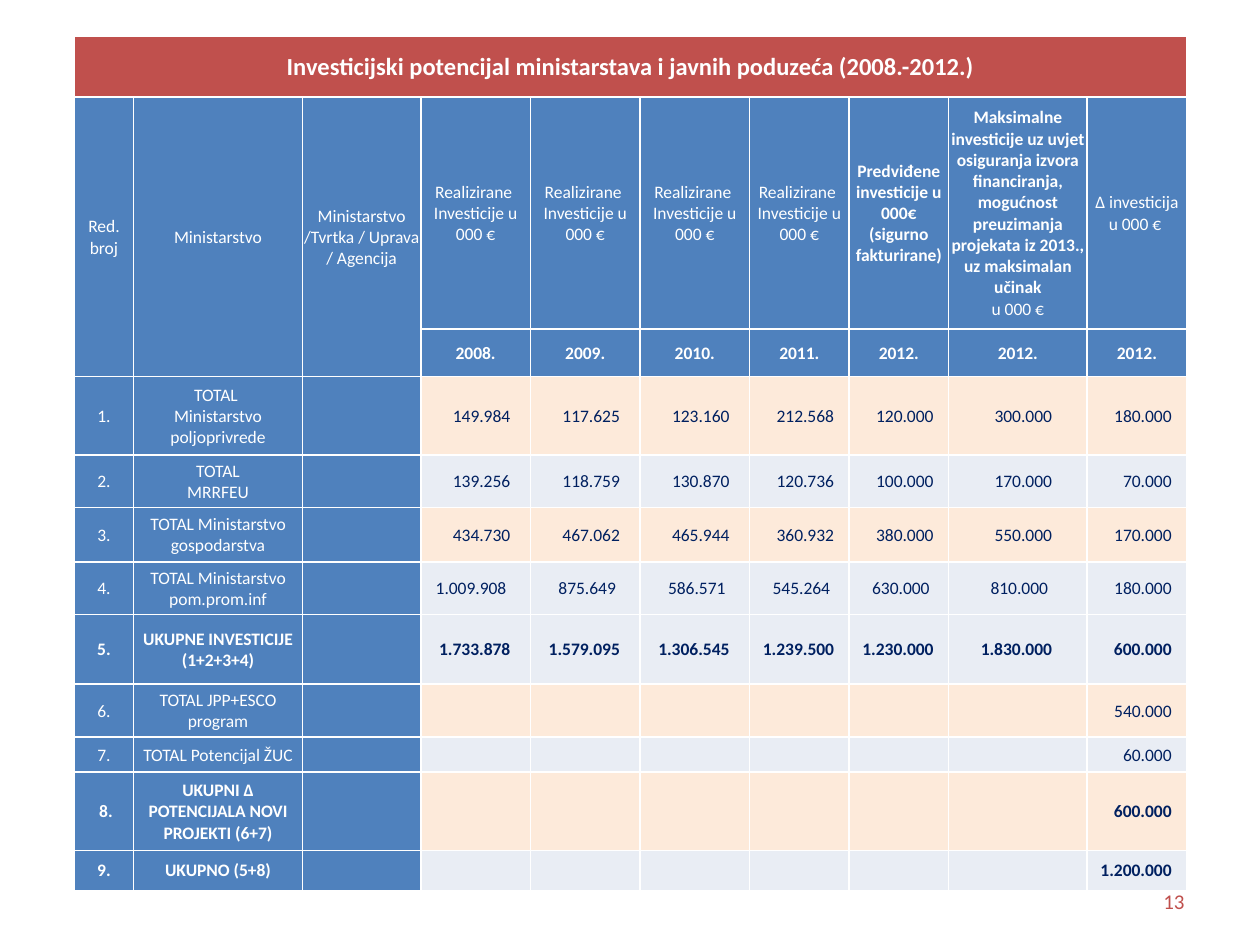
from lxml.etree import SubElement
from pptx import Presentation
from pptx.dml.color import RGBColor
from pptx.enum.text import MSO_ANCHOR as Anchor, PP_ALIGN as Align
from pptx.oxml import parse_xml
from pptx.oxml.ns import nsdecls, qn
from pptx.util import Inches, Pt

WHITE = RGBColor(0xFF, 0xFF, 0xFF)
RED = RGBColor(0xC0, 0x50, 0x4D)
BLUE = RGBColor(0x4F, 0x81, 0xBD)
NAVY = RGBColor(0x00, 0x20, 0x60)
PEACH = RGBColor(0xFD, 0xEA, 0xDA)
PALE = RGBColor(0xE9, 0xED, 0xF4)

FONT = "Calibri"
COL_WIDTHS = [0.47, 1.34, 0.94, 0.87, 0.87, 0.87, 0.79, 0.79, 1.1, 0.79]
ROW_HEIGHTS = [0.48, 1.84, 0.38, 0.62, 0.42, 0.43, 0.42, 0.55, 0.42, 0.28, 0.62, 0.32]
# Right insets of the value columns
VALUE_INSETS = [0.16, 0.16, 0.16, 0.12, 0.12, 0.28, 0.12]
FIRST_VALUE_COL = 3
FIRST_BODY_ROW = 3

TITLE = "Investicijski potencijal ministarstava i javnih poduzeća (2008.-2012.)"
REALIZED = "Realizirane  Investicije u 000 €"
PLANNED = "Predviđene investicije u 000€ (sigurno fakturirane)"
MAXIMUM = ("Maksimalne investicije uz uvjet osiguranja izvora financiranja, "
           "mogućnost preuzimanja projekata iz 2013., uz maksimalan učinak")
# Each heading is a list of (paragraph text, bold)
HEADINGS = [
    [("Red. broj", False)],
    [("Ministarstvo", False)],
    [("Ministarstvo /Tvrtka / Uprava / Agencija", False)],
    *[[(REALIZED, False)]] * 4,
    [(PLANNED, True)],
    [(MAXIMUM, True), ("u 000 €", False)],
    [("Δ investicija", False), ("u 000 € ", False)],
]
YEARS = ["2008.", "2009.", "2010.", "2011.", "2012.", "2012.", "2012."]
NO_VALUES = [""] * 6
# Number, name, values, fill of the values, bold
BODY = [
    ("1.", "TOTAL \nMinistarstvo poljoprivrede",
     ["149.984", "117.625", "123.160", "212.568", "120.000", "300.000", "180.000"], PEACH, False),
    ("2.", "TOTAL\nMRRFEU",
     ["139.256", "118.759", "130.870", "120.736", "100.000", "170.000", "70.000"], PALE, False),
    ("3.", "TOTAL Ministarstvo gospodarstva",
     ["434.730", "467.062", "465.944", "360.932", "380.000", "550.000", "170.000"], PEACH, False),
    ("4.", "TOTAL Ministarstvo pom.prom.inf",
     ["1.009.908 ", "875.649 ", "586.571 ", "545.264 ", "630.000 ", "810.000 ", "180.000"],
     PALE, False),
    ("5.", "UKUPNE INVESTICIJE (1+2+3+4)",
     ["1.733.878", "1.579.095", "1.306.545", "1.239.500", "1.230.000", "1.830.000", "600.000"],
     PALE, True),
    ("6.", "TOTAL JPP+ESCO program", NO_VALUES + ["540.000"], PEACH, False),
    ("7.", "TOTAL Potencijal ŽUC", NO_VALUES + ["60.000"], PALE, False),
    (" 8.", "UKUPNI Δ POTENCIJALA NOVI PROJEKTI (6+7)", NO_VALUES + ["600.000"], PEACH, True),
    ("9.", "UKUPNO (5+8)", NO_VALUES + ["1.200.000"], PALE, True),
]


def format_paragraph(p, text, size, color, bold=False, align=Align.CENTER):
    p.text = text
    p.alignment = align
    p.font.name = FONT
    p.font.size = Pt(size)
    p.font.bold = bold
    p.font.color.rgb = color


def add_borders(cell):
    tc_pr = cell._tc.get_or_add_tcPr()
    for side in ("lnL", "lnR", "lnT", "lnB"):
        ln = parse_xml(f'<a:{side} {nsdecls("a")} w="{Pt(1)}"/>')
        fill = SubElement(ln, qn("a:solidFill"))
        SubElement(fill, qn("a:srgbClr"), val=str(WHITE))
        tc_pr.append(ln)


def style_cell(cell, fill, right_inset=0.01):
    add_borders(cell)
    cell.fill.solid()
    cell.fill.fore_color.rgb = fill
    cell.vertical_anchor = Anchor.MIDDLE
    cell.margin_left = cell.margin_top = Inches(0.01)
    cell.margin_right = Inches(right_inset)
    cell.margin_bottom = 0


def fill_label(cell, paragraphs, size=10):
    tf = cell.text_frame
    for i, (text, bold) in enumerate(paragraphs):
        p = tf.add_paragraph() if i else tf.paragraphs[0]
        format_paragraph(p, text, size, WHITE, bold)


def add_investment_table(slide):
    frame = slide.shapes.add_table(len(ROW_HEIGHTS), len(COL_WIDTHS), Inches(0.59),
                                   Inches(0.29), Inches(8.82), Inches(6.77))
    table = frame.table
    table.first_row = table.horz_banding = False
    for column, width in zip(table.columns, COL_WIDTHS):
        column.width = Inches(width)
    for row, height in zip(table.rows, ROW_HEIGHTS):
        row.height = Inches(height)

    # Title and heading rows
    for r in range(FIRST_BODY_ROW):
        for c in range(len(COL_WIDTHS)):
            style_cell(table.cell(r, c), BLUE if r else RED)
    table.cell(0, 0).merge(table.cell(0, len(COL_WIDTHS) - 1))
    for c in range(FIRST_VALUE_COL):
        table.cell(1, c).merge(table.cell(2, c))
    fill_label(table.cell(0, 0), [(TITLE, True)], 14)
    for c, heading in enumerate(HEADINGS):
        fill_label(table.cell(1, c), heading)
    for c, year in enumerate(YEARS, FIRST_VALUE_COL):
        fill_label(table.cell(2, c), [(year, True)])

    # Body rows
    for r, (number, name, values, fill, bold) in enumerate(BODY, FIRST_BODY_ROW):
        for c, label in enumerate((number, name, "")):
            cell = table.cell(r, c)
            style_cell(cell, BLUE)
            fill_label(cell, [(label, bold)])
        for c, (value, inset) in enumerate(zip(values, VALUE_INSETS), FIRST_VALUE_COL):
            cell = table.cell(r, c)
            style_cell(cell, fill, inset)
            format_paragraph(cell.text_frame.paragraphs[0], value, 10, NAVY, bold, Align.RIGHT)


def add_page_number(slide, number):
    box = slide.shapes.add_textbox(Inches(7.17), Inches(6.95), Inches(2.33), Inches(0.4))
    tf = box.text_frame
    tf.word_wrap = True
    tf.vertical_anchor = Anchor.MIDDLE
    format_paragraph(tf.paragraphs[0], number, 12, RED, align=Align.RIGHT)


def main():
    prs = Presentation()
    prs.slide_width, prs.slide_height = Inches(10), Inches(7.5)
    slide = prs.slides.add_slide(prs.slide_layouts[6])
    add_investment_table(slide)
    add_page_number(slide, "13")
    prs.save("out.pptx")


if __name__ == "__main__":
    main()
